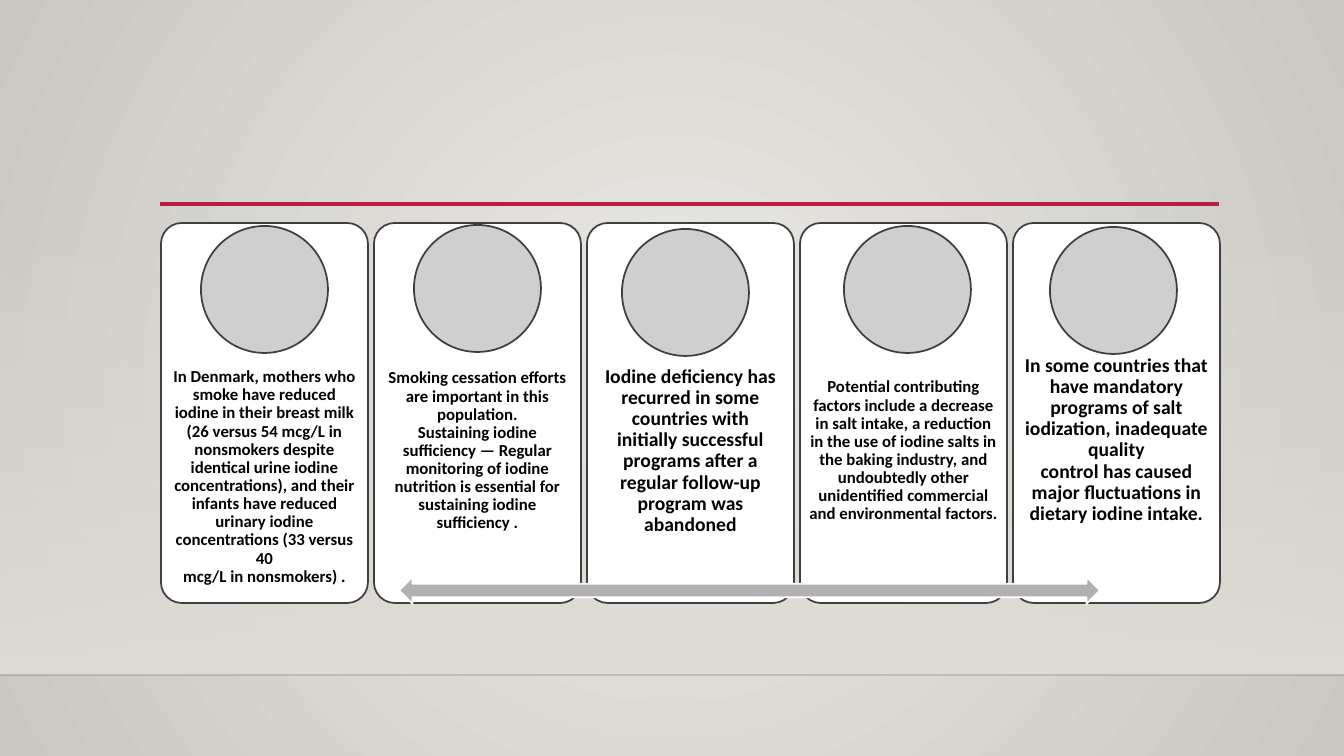
"""Build a slide of five iodine cards above a double arrow."""
from copy import deepcopy
from dataclasses import dataclass

from lxml.etree import SubElement
from pptx import Presentation
from pptx.dml.color import RGBColor
from pptx.enum.shapes import MSO_CONNECTOR as Connector, MSO_SHAPE as Shape
from pptx.enum.text import MSO_ANCHOR as Anchor, PP_ALIGN as Align
from pptx.oxml.ns import qn
from pptx.util import Emu, Pt

EMU_PER_PX = 914400 / 100.8
SLIDE_WIDTH, SLIDE_HEIGHT = 1344, 756
CARD_LEFT, CARD_TOP, CARD_WIDTH, CARD_HEIGHT = 161, 223, 207, 380
CARD_STEP = 213
CIRCLE_SIZE = 127
FLOOR_TOP = 675


@dataclass(frozen=True)
class Theme:
    font: str = "Calibri"
    small: int = 12
    large: int = 14
    outline_width: float = 1.25
    rule_width: float = 2.5
    floor_line_width: float = 1
    text: str = "000000"
    card: str = "FFFFFF"
    outline: str = "3F3F3F"
    circle: str = "CFCFCF"
    arrow: str = "B1B1B1"
    rule: str = "B71E42"
    floor_line: str = "000001"
    wall: str = "DFDBD5"
    backdrop_center: str = "ECEAE7"
    backdrop_edge: str = "CAC7C1"


@dataclass(frozen=True)
class Card:
    text: str
    circle_left: int
    circle_top: int
    size: int
    inset: int
    text_top: int = 375
    text_height: int = 152


THEME = Theme()
CARDS = [
    Card("In Denmark, mothers who smoke have reduced\niodine in their breast milk "
         "(26 versus 54 mcg/L in nonsmokers despite identical urine iodine "
         "concentrations), and their infants have reduced urinary iodine "
         "concentrations (33 versus 40\nmcg/L in nonsmokers) .",
         201, 226, THEME.small, 9, text_top=367, text_height=220),
    Card("Smoking cessation efforts are important in this population.\n"
         "Sustaining iodine sufficiency — Regular monitoring of iodine nutrition "
         "is essential for sustaining iodine sufficiency .",
         414, 225, THEME.small, 9),
    Card("Iodine deficiency has recurred in some countries with\ninitially "
         "successful programs after a regular follow-up program was abandoned",
         622, 229, THEME.large, 11),
    Card("Potential contributing factors include a decrease in salt intake, "
         "a reduction in the use of iodine salts in\nthe baking industry, and "
         "undoubtedly other unidentified commercial and environmental factors.",
         844, 226, THEME.small, 9),
    Card("In some countries that have mandatory programs of salt iodization, "
         "inadequate quality\ncontrol has caused major fluctuations in dietary "
         "iodine intake.",
         1050, 227, THEME.large, 11, text_height=130),
]


def px(length: int) -> Emu:
    return Emu(round(length * EMU_PER_PX))


def set_alpha(element, percent: int) -> None:
    color = element.find(".//" + qn("a:srgbClr"))
    SubElement(color, qn("a:alpha")).set("val", str(percent * 1000))


def set_gradient(fill, *colors: str) -> None:
    fill.gradient()
    for stop, color in zip(fill.gradient_stops, colors):
        stop.color.rgb = RGBColor.from_string(color)
    fill.gradient_stops[0].position = 0
    fill.gradient_stops[1].position = 1


def paint_backdrop(page) -> None:
    set_gradient(page.background.fill, THEME.backdrop_center, THEME.backdrop_edge)
    gradient = page.element.find(".//" + qn("a:gradFill"))
    gradient.remove(gradient.find(qn("a:lin")))
    circle = SubElement(gradient, qn("a:path"))
    circle.set("path", "circle")
    center = SubElement(circle, qn("a:fillToRect"))
    for side in "ltrb":
        center.set(side, "50000")


def add_wall(page) -> None:
    wall = page.shapes.add_shape(Shape.RECTANGLE, 0, px(CARD_TOP), px(SLIDE_WIDTH),
                                 px(FLOOR_TOP - CARD_TOP))
    wall.shadow.inherit = False
    wall.line.fill.background()
    set_gradient(wall.fill, THEME.wall, THEME.wall)
    wall.fill.gradient_angle = 270
    set_alpha(wall.element.spPr, 0)


def add_line(page, left: int, right: int, top: int, *, color: str, width: float):
    line = page.shapes.add_connector(Connector.STRAIGHT, px(left), px(top),
                                     px(right), px(top))
    line.line.color.rgb = RGBColor.from_string(color)
    line.line.width = Pt(width)
    SubElement(line.element.spPr, qn("a:effectLst"))
    return line


def add_figure(page, kind: Shape, left: int, top: int, width: int, height: int, *,
               fill: str, outline: str = THEME.outline):
    figure = page.shapes.add_shape(kind, px(left), px(top), px(width), px(height))
    figure.shadow.inherit = False
    figure.fill.solid()
    figure.fill.fore_color.rgb = RGBColor.from_string(fill)
    figure.line.color.rgb = RGBColor.from_string(outline)
    figure.line.width = Pt(THEME.outline_width)
    return figure


def add_text(page, text: str, left: int, top: int, width: int, height: int, *,
             size: int, inset: int) -> None:
    frame = page.shapes.add_textbox(px(left), px(top), px(width), px(height)).text_frame
    frame.word_wrap = True
    frame.vertical_anchor = Anchor.MIDDLE
    frame.margin_left = frame.margin_right = px(inset)
    frame.margin_top = frame.margin_bottom = px(inset)
    para = frame.paragraphs[0]
    para.text = text.replace("\n", "\v")
    para.alignment = Align.CENTER
    para.line_spacing = 0.9
    for span in para.runs:
        span.font.name = THEME.font
        span.font.size = Pt(size)
        span.font.bold = True
        span.font.color.rgb = RGBColor.from_string(THEME.text)
    run_format = para._p.find(".//" + qn("a:rPr"))
    for line_break in para._p.findall(qn("a:br")):
        line_break.append(deepcopy(run_format))


def add_card(page, card: Card, left: int) -> None:
    panel = add_figure(page, Shape.ROUNDED_RECTANGLE, left, CARD_TOP, CARD_WIDTH,
                       CARD_HEIGHT, fill=THEME.card)
    panel.adjustments[0] = 0.1
    add_text(page, card.text, left, card.text_top, CARD_WIDTH, card.text_height,
             size=card.size, inset=card.inset)
    add_figure(page, Shape.OVAL, card.circle_left, card.circle_top, CIRCLE_SIZE,
               CIRCLE_SIZE, fill=THEME.circle)


def main() -> None:
    deck = Presentation()
    deck.slide_width, deck.slide_height = px(SLIDE_WIDTH), px(SLIDE_HEIGHT)
    page = deck.slides.add_slide(deck.slide_layouts.get_by_name("Blank"))
    paint_backdrop(page)
    add_wall(page)
    floor = add_line(page, 0, SLIDE_WIDTH, FLOOR_TOP, color=THEME.floor_line,
                     width=THEME.floor_line_width)
    set_alpha(floor.element.spPr, 20)
    add_line(page, 160, 1219, 204, color=THEME.rule, width=THEME.rule_width)
    for index, card in enumerate(CARDS):
        add_card(page, card, CARD_LEFT + index * CARD_STEP)
    add_figure(page, Shape.LEFT_RIGHT_ARROW, 399, 577, 701, 27, fill=THEME.arrow,
               outline=THEME.card)
    deck.save("out.pptx")


if __name__ == "__main__":
    main()
